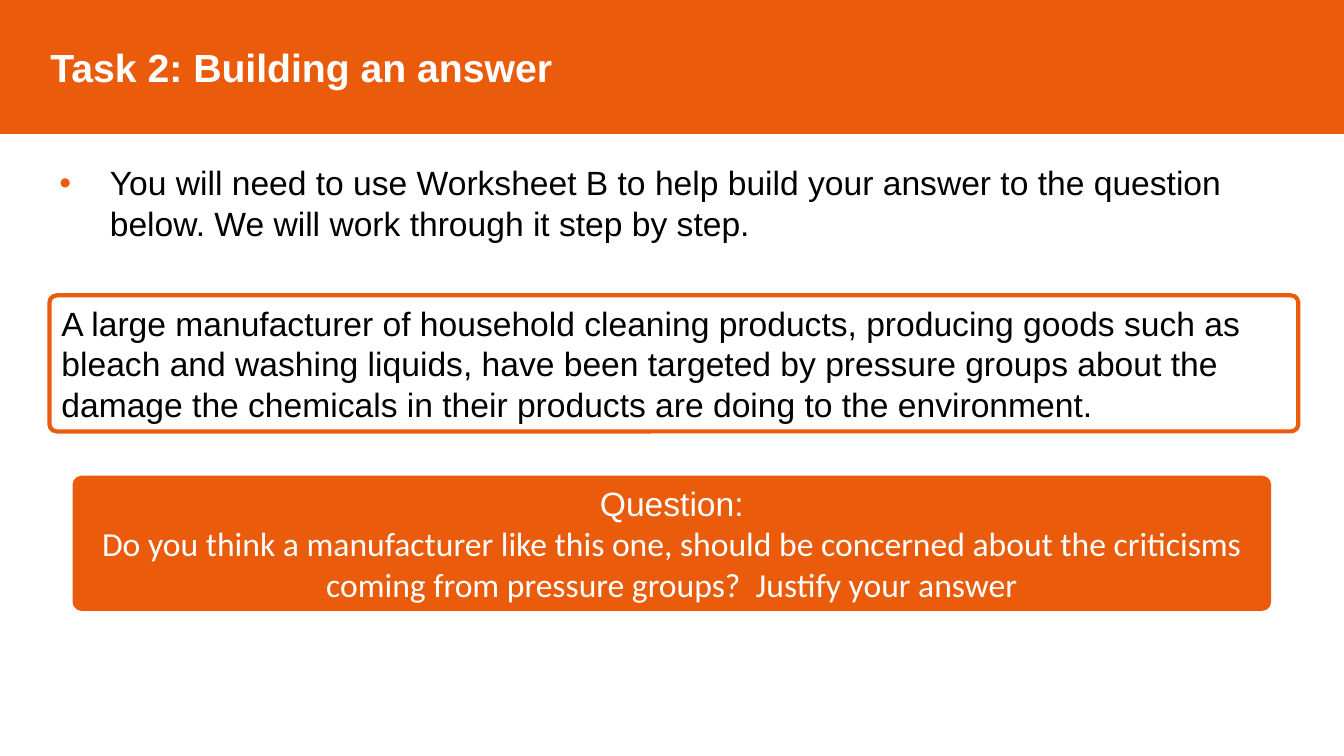
from lxml import etree
from pptx import Presentation
from pptx.dml.color import RGBColor
from pptx.enum.shapes import MSO_SHAPE
from pptx.enum.text import MSO_ANCHOR, MSO_AUTO_SIZE, PP_ALIGN
from pptx.oxml.ns import qn
from pptx.util import Pt

ROUNDED = MSO_SHAPE.ROUNDED_RECTANGLE
TOP, MIDDLE = MSO_ANCHOR.TOP, MSO_ANCHOR.MIDDLE
NO_FIT = MSO_AUTO_SIZE.NONE
LEFT, CENTER = PP_ALIGN.LEFT, PP_ALIGN.CENTER

TITLE = "Task 2: Building an answer"
INSTRUCTION = ("You will need to use Worksheet B to help build your answer to the question "
               "below. We will work through it step by step.")
SCENARIO = ("A large manufacturer of household cleaning products, producing goods such as "
            "bleach and washing liquids, have been targeted by pressure groups about the "
            "damage the chemicals in their products are doing to the environment.")
QUESTION_LABEL = "Question:"
QUESTION = ("Do you think a manufacturer like this one, should be concerned about the criticisms "
            "coming from pressure groups?  Justify your answer")

THEME = {
    "accent": RGBColor(0xEA, 0x5B, 0x0C),
    "dark": RGBColor(0, 0, 0),
    "light": RGBColor(0xFF, 0xFF, 0xFF),
    "font": "Arial",
    "question_font": "Calibri",
    "title_size": Pt(28),
    "body_size": Pt(24),
}

WIDTH, HEIGHT = 960, 540
BANNER = (0, 0, WIDTH, 95.04)
INSTRUCTION_BOX = (35.28, 112.32, 907.2, 65.52)
SCENARIO_BOX = (35.28, 210.96, 892.08, 97.2)
QUESTION_BOX = (53.28, 341.28, 853.2, 93.6)
CORNER = 0.054
BULLET_INDENT = 36


def place(sp, box):
    sp.left, sp.top, sp.width, sp.height = map(Pt, box)


def outline(sp, weight):
    sp.line.color.rgb = THEME["accent"]
    sp.line.width = Pt(weight)


def fill_accent(sp):
    sp.fill.solid()
    sp.fill.fore_color.rgb = THEME["accent"]


def setup_frame(tf, anchor, left_inset=7.2):
    tf.word_wrap = True
    tf.auto_size = NO_FIT
    tf.vertical_anchor = anchor
    tf.margin_left, tf.margin_right = Pt(left_inset), Pt(7.2)
    tf.margin_top = tf.margin_bottom = Pt(3.6)


def write(p, text, color, size="body_size", font="font", align=LEFT, bold=False):
    p.text = text
    p.alignment = align
    p.space_before = Pt(0)
    p.font.name = THEME[font]
    p.font.size = THEME[size]
    p.font.bold = bold
    p.font.color.rgb = THEME[color]


def add_bullet(p):
    pPr = p._p.get_or_add_pPr()
    pPr.set("marL", str(Pt(BULLET_INDENT)))
    pPr.set("indent", str(-Pt(BULLET_INDENT)))
    color = etree.Element(qn("a:buClr"))
    etree.SubElement(color, qn("a:srgbClr"), val=str(THEME["accent"]))
    font = etree.Element(qn("a:buFont"), typeface=THEME["font"])
    char = etree.Element(qn("a:buChar"), char="•")
    defaults = pPr.find(qn("a:defRPr"))
    for el in (color, font, char):
        defaults.addprevious(el)


def add_box(slide, box, paragraphs, filled):
    sp = slide.shapes.add_shape(ROUNDED, *map(Pt, box))
    sp.adjustments[0] = CORNER
    sp.shadow.inherit = False
    outline(sp, 3)
    if filled:
        fill_accent(sp)
    else:
        sp.fill.background()
    tf = sp.text_frame
    setup_frame(tf, MIDDLE)
    for i, (text, font) in enumerate(paragraphs):
        p = tf.add_paragraph() if i else tf.paragraphs[0]
        write(p, text, "light" if filled else "dark", font=font,
              align=CENTER if filled else LEFT)


def main():
    prs = Presentation()
    prs.slide_width, prs.slide_height = Pt(WIDTH), Pt(HEIGHT)
    slide = prs.slides.add_slide(prs.slide_layouts[1])

    title = slide.shapes.title
    place(title, BANNER)
    fill_accent(title)
    outline(title, 1)
    setup_frame(title.text_frame, MIDDLE, left_inset=36)
    write(title.text_frame.paragraphs[0], TITLE, "light", size="title_size", bold=True)

    body = slide.placeholders[1]
    place(body, INSTRUCTION_BOX)
    setup_frame(body.text_frame, TOP)
    p = body.text_frame.paragraphs[0]
    write(p, INSTRUCTION, "dark")
    p.space_after = Pt(12)
    add_bullet(p)

    add_box(slide, SCENARIO_BOX, [(SCENARIO, "font")], filled=False)
    add_box(slide, QUESTION_BOX,
            [(QUESTION_LABEL, "font"), (QUESTION, "question_font")], filled=True)
    prs.save("out.pptx")


if __name__ == "__main__":
    main()
